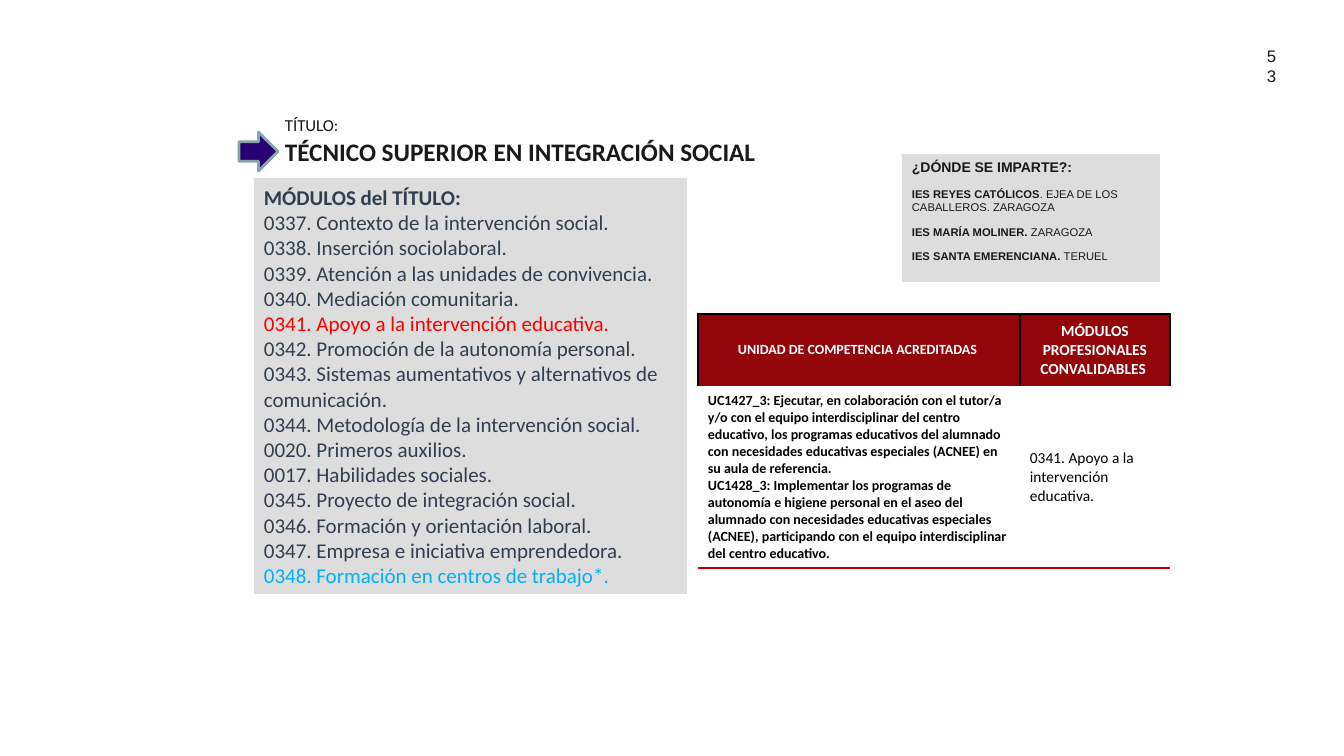
from pptx import Presentation
from pptx.dml.color import RGBColor
from pptx.enum.shapes import MSO_SHAPE as SHAPE
from pptx.enum.text import MSO_ANCHOR as ANCHOR, PP_ALIGN as ALIGN
from pptx.oxml import parse_xml
from pptx.oxml.ns import nsdecls
from pptx.util import Pt

PX = 914400 / 100.8
INK, SLATE, GREY, WHITE, BLACK = "1A1918", "323E4F", "DDDDDD", "FFFFFF", "000000"


def rgb(color):
    return RGBColor.from_string(color)


def write(tf, paragraphs, align=ALIGN.LEFT, after=0, **base):
    """Each paragraph is a list of (text, format) runs on top of the base format."""
    for i, runs in enumerate(paragraphs):
        p = tf.paragraphs[0] if i == 0 else tf.add_paragraph()
        p.alignment = align
        p.space_after = Pt(after)
        for text, fmt in runs:
            r = p.add_run()
            r.text = text
            values = {"name": "Calibri", "bold": False, "color": INK, **base, **fmt}
            r.font.color.rgb = rgb(values.pop("color"))
            r.font.size = Pt(values.pop("size"))
            for key, value in values.items():
                setattr(r.font, key, value)


prs = Presentation()
prs.slide_width, prs.slide_height = int(1344 * PX), int(756 * PX)
s = prs.slides.add_slide(prs.slide_layouts[6])

# Page number and title
labels = [
    ((1256, 55, 31, 22), False, ANCHOR.MIDDLE, ALIGN.CENTER, 0,
     [[("53", {"size": 12, "name": "Arial"})]]),
    ((275, 101, 659, 72), True, ANCHOR.TOP, ALIGN.LEFT, 5,
     [[("TÍTULO:", {"size": 12}), (" ", {"size": 18})],
      [("TÉCNICO SUPERIOR EN INTEGRACIÓN SOCIAL", {"size": 18, "bold": True})]]),
]
for box, wrap, anchor, align, inset, paragraphs in labels:
    tf = s.shapes.add_textbox(*[int(v * PX) for v in box]).text_frame
    tf.word_wrap, tf.vertical_anchor = wrap, anchor
    tf.margin_top = tf.margin_bottom = int(inset * PX)
    write(tf, paragraphs, align)

# Arrow and grey panels
shapes = {}
for name, kind, box, fill in [
    ("arrow", SHAPE.RIGHT_ARROW, (239, 132, 39, 39), "280071"),
    ("modules", SHAPE.RECTANGLE, (254, 178, 433, 416), GREY),
    ("schools", SHAPE.RECTANGLE, (902, 154, 258, 128), GREY),
]:
    sp = s.shapes.add_shape(kind, *[int(v * PX) for v in box])
    sp.shadow.inherit = False
    sp.fill.solid()
    sp.fill.fore_color.rgb = rgb(fill)
    sp.line.fill.background()
    sp.text_frame.word_wrap = True
    shapes[name] = sp
shapes["arrow"].line.color.rgb = rgb("89A4A7")
shapes["arrow"].line.width = Pt(2)

# Module list
modules = [
    "0337. Contexto de la intervención social.",
    "0338. Inserción sociolaboral.",
    "0339. Atención a las unidades de convivencia.",
    "0340. Mediación comunitaria.",
    "0341. Apoyo a la intervención educativa.",
    "0342. Promoción de la autonomía personal.",
    "0343. Sistemas aumentativos y alternativos de comunicación.",
    "0344. Metodología de la intervención social.",
    "0020. Primeros auxilios.",
    "0017. Habilidades sociales.",
    "0345. Proyecto de integración social.",
    "0346. Formación y orientación laboral.",
    "0347. Empresa e iniciativa emprendedora.",
    "0348. Formación en centros de trabajo*.",
]
accents = {"0341": "FF0000", "0348": "00B0F0"}
lines = [[("MÓDULOS del TÍTULO:", {"bold": True})]]
lines += [[(m, {"color": accents.get(m[:4], SLATE)})] for m in modules]
tf = shapes["modules"].text_frame
tf.vertical_anchor = ANCHOR.MIDDLE
write(tf, lines, size=15, color=SLATE)

# Schools
schools = [
    ("IES REYES CATÓLICOS", ". EJEA DE LOS CABALLEROS. ZARAGOZA"),
    ("IES MARÍA MOLINER.", " ZARAGOZA"),
    ("IES SANTA EMERENCIANA.", " TERUEL"),
]
lines = [[("¿DÓNDE SE IMPARTE?:", {"size": 10, "bold": True})]]
lines += [[(school, {"bold": True}), (town, {})] for school, town in schools]
tf = shapes["schools"].text_frame
tf.vertical_anchor = ANCHOR.TOP
write(tf, lines, after=8, size=8, name="Arial")

# Table of units and modules
table = s.shapes.add_table(2, 2, *[int(v * PX) for v in (698, 314, 472, 254)]).table
table.first_row = table.horz_banding = False
table._tbl.tblPr.find(
    "{http://schemas.openxmlformats.org/drawingml/2006/main}tableStyleId"
).text = "{2D5ABB26-0587-4C30-8999-92F81FD0307C}"
for col, width in zip(table.columns, (322, 150)):
    col.width = int(width * PX)
for row, height in zip(table.rows, (72, 182)):
    row.height = int(height * PX)

units = [
    "UC1427_3: Ejecutar, en colaboración con el tutor/a y/o con el equipo "
    "interdisciplinar del centro educativo, los programas educativos del alumnado "
    "con necesidades educativas especiales (ACNEE) en su aula de referencia.",
    "UC1428_3: Implementar los programas de autonomía e higiene personal en el aseo "
    "del alumnado con necesidades educativas especiales (ACNEE), participando con el "
    "equipo interdisciplinar del centro educativo.",
]
bottom = {"B": ("C00000", 2.25)}
cells = [
    (0, 0, ["UNIDAD DE COMPETENCIA ACREDITADAS "], 10, True,
     {"L": (BLACK, 1.5), "R": (BLACK, 1), "T": (BLACK, 1)}),
    (0, 1, ["MÓDULOS PROFESIONALES CONVALIDABLES "], 11, True,
     {"L": (BLACK, 1), "R": (BLACK, 1.5), "T": (BLACK, 1)}),
    (1, 0, units, 10, True, bottom),
    (1, 1, ["0341. Apoyo a la intervención educativa."], 11, False, bottom),
]
for row, col, texts, size, bold, borders in cells:
    cell = table.cell(row, col)
    cell.vertical_anchor = ANCHOR.MIDDLE
    cell.margin_left = cell.margin_right = int(10 * PX)
    cell.margin_top = cell.margin_bottom = int(4 * PX)
    for side, (color, width) in borders.items():
        cell._tc.get_or_add_tcPr().append(parse_xml(
            f'<a:ln{side} {nsdecls("a")} w="{int(Pt(width))}"><a:solidFill>'
            f'<a:srgbClr val="{color}"/></a:solidFill></a:ln{side}>'))
    if row == 0:
        cell.fill.solid()
        cell.fill.fore_color.rgb = rgb("92060B")
    else:
        cell.fill.background()
    write(cell.text_frame, [[(t, {})] for t in texts],
          ALIGN.LEFT if row else ALIGN.CENTER,
          size=size, bold=bold, color=BLACK if row else WHITE)

prs.save("out.pptx")
